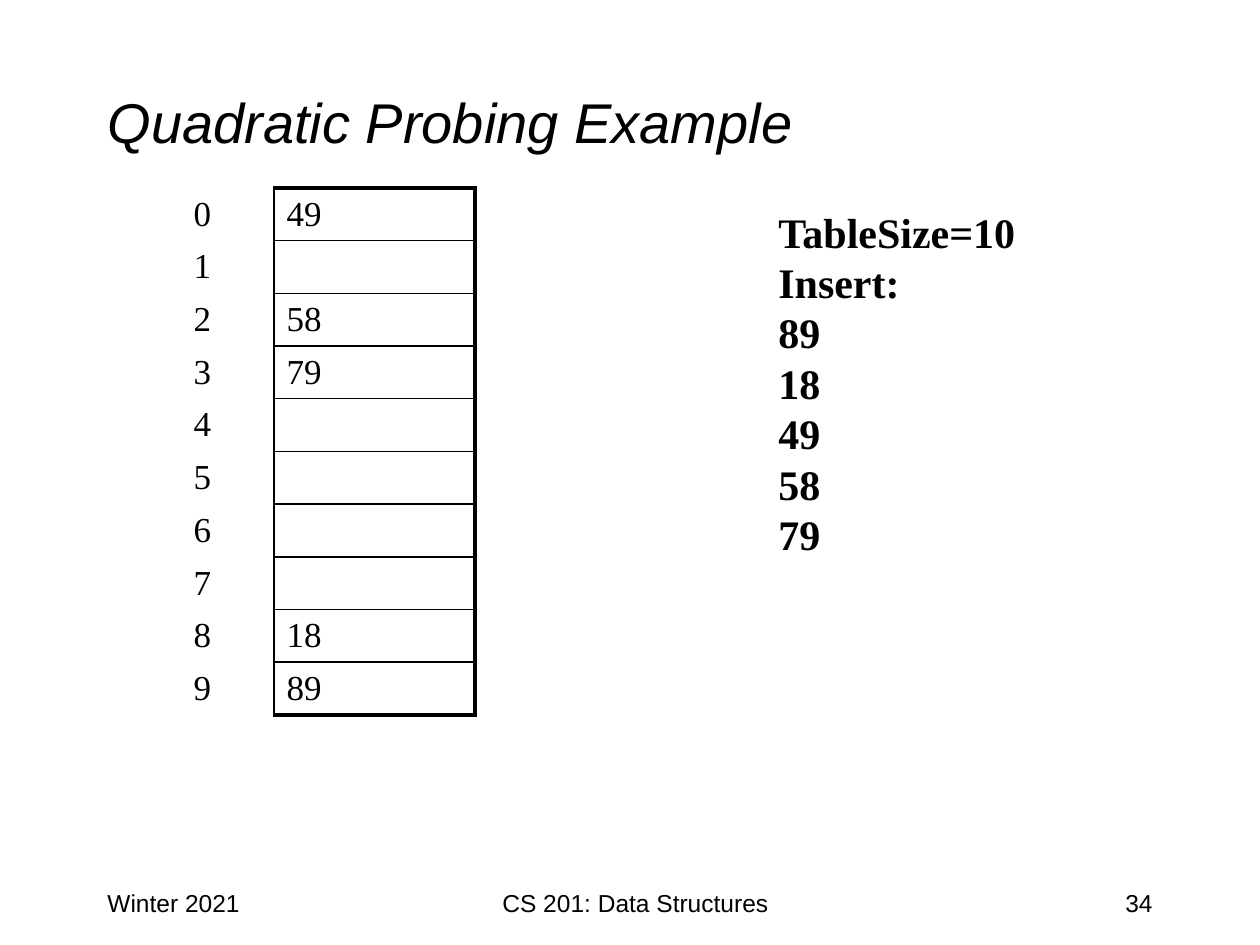
from lxml import etree
from pptx import Presentation, util as u
from pptx.dml.color import RGBColor
from pptx.enum import text as t
from pptx.oxml.ns import qn

PX = 914400 // 126
COLORS = {"ink": "000000"}
SANS, SERIF = "Arial", "Times New Roman"

TITLE = "Quadratic Probing Example"
SLOTS = ["49", "", "58", "79", "", "", "", "", "18", "89"]
INSERTIONS = ["TableSize=10", "Insert:", "89", "18", "49", "58", "79"]
# text, left, width, alignment
FOOTERS = [
    ("Winter 2021", 95, 262, t.PP_ALIGN.LEFT),
    ("CS 201: Data Structures", 399, 473, t.PP_ALIGN.CENTER),
    ("34", 903, 262, t.PP_ALIGN.RIGHT),
]
TABLE_BOX = (181, 188, 294, 527)
INDEX_WIDTH = 93
THIN, THICK = 1, 2.25


def lengths(*values):
    return [value * PX for value in values]


def add_run(paragraph, content, font_name, size, bold=False, italic=False):
    run = paragraph.add_run()
    run.text = content
    font = run.font
    font.name, font.size, font.bold, font.italic = font_name, u.Pt(size), bold, italic
    font.color.rgb = RGBColor.from_string(COLORS["ink"])


def add_text(slide, box, lines, font_name, size, align=t.PP_ALIGN.LEFT, bold=False):
    frame = slide.shapes.add_textbox(*lengths(*box)).text_frame
    frame.word_wrap = True
    for number, line in enumerate(lines):
        paragraph = frame.add_paragraph() if number else frame.paragraphs[0]
        paragraph.alignment = align
        add_run(paragraph, line, font_name, size, bold)


def set_borders(cell, widths):
    """Set left, right, top and bottom lines in points; zero hides a line."""
    properties = cell._tc.get_or_add_tcPr()
    for position, (side, width) in enumerate(zip("LRTB", widths)):
        line = etree.Element(qn(f"a:ln{side}"), w=str(u.Pt(width)))
        if width:
            fill = etree.SubElement(line, qn("a:solidFill"))
            etree.SubElement(fill, qn("a:srgbClr"), val=COLORS["ink"])
        else:
            etree.SubElement(line, qn("a:noFill"))
        properties.insert(position, line)


def fill_cell(cell, content, borders):
    cell.fill.background()
    cell.vertical_anchor = t.MSO_ANCHOR.MIDDLE
    cell.margin_top = cell.margin_bottom = 0
    if content:
        add_run(cell.text_frame.paragraphs[0], content, SERIF, 20)
    set_borders(cell, borders)


def add_hash_table(slide):
    count = len(SLOTS)
    table = slide.shapes.add_table(count, 2, *lengths(*TABLE_BOX)).table
    table.first_row = table.horz_banding = False
    table.columns[0].width = INDEX_WIDTH * PX
    table.columns[1].width = (TABLE_BOX[2] - INDEX_WIDTH) * PX
    for index, value in enumerate(SLOTS):
        top = THIN if index else THICK
        bottom = THIN if index < count - 1 else THICK
        fill_cell(table.cell(index, 0), str(index), (0, THIN, 0, 0))
        fill_cell(table.cell(index, 1), value, (THIN, THICK, top, bottom))


def main():
    presentation = Presentation()
    presentation.slide_width, presentation.slide_height = lengths(1260, 945)
    slide = presentation.slides.add_slide(presentation.slide_layouts[5])

    title = slide.shapes.title
    title.left, title.top, title.width, title.height = lengths(95, 42, 1071, 158)
    title.text_frame.vertical_anchor = t.MSO_ANCHOR.MIDDLE
    paragraph = title.text_frame.paragraphs[0]
    paragraph.alignment = t.PP_ALIGN.LEFT
    add_run(paragraph, TITLE, SANS, 32, italic=True)

    for content, left, width, align in FOOTERS:
        add_text(slide, (left, 882, width, 63), [content], SANS, 14, align)
    add_hash_table(slide)
    add_text(slide, (766, 200, 305, 369), INSERTIONS, SERIF, 24, bold=True)
    presentation.save("out.pptx")


if __name__ == "__main__":
    main()
